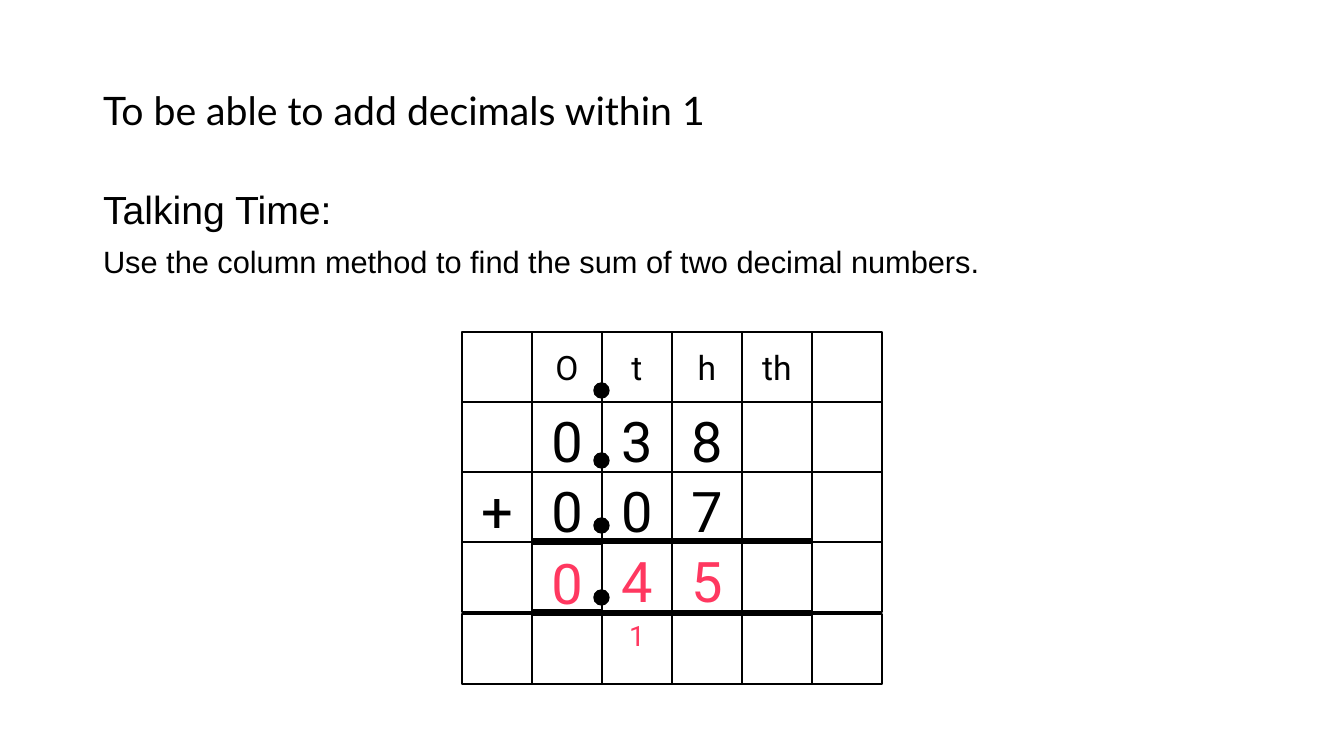
from lxml.etree import SubElement
from pptx import Presentation
from pptx.dml.color import RGBColor
from pptx.enum.shapes import MSO_CONNECTOR, MSO_SHAPE
from pptx.enum.text import MSO_ANCHOR, MSO_AUTO_SIZE, PP_ALIGN
from pptx.oxml.ns import qn
from pptx.util import Pt

PX = 914400 / 100.8
BLACK, WHITE, RED = "000000", "FFFFFF", "FF3860"
CELL = 70
DOT = 15
ROW_TOPS = [0, 70, 140, 210, 282]
# Each row: its six cell texts, text size, colour, anchor
ROWS = [
    (["", "O", "t", "h", "th", ""], 24, BLACK, MSO_ANCHOR.MIDDLE),
    (["", "0", "3", "8", "", ""], 40, BLACK, MSO_ANCHOR.TOP),
    (["+", "0", "0", "7", "", ""], 40, BLACK, MSO_ANCHOR.TOP),
    (["", "", "4", "5", "", ""], 40, RED, MSO_ANCHOR.TOP),
    (["", "", "1", "", "", ""], 20, RED, MSO_ANCHOR.TOP),
]
BAR_TOPS = [209, 281]
DOT_TOPS = [51, 121, 186, 258]


def px(length):
    return round(length * PX)


def color(value):
    return RGBColor.from_string(value)


def write(paragraph, text, size=24, font="Arial", fill=BLACK,
          align=PP_ALIGN.LEFT, spacing=1.0, before=0):
    paragraph.alignment = align
    paragraph.line_spacing = spacing
    paragraph.space_before = Pt(before)
    run = paragraph.add_run()
    run.text = text
    run.font.size = Pt(size)
    run.font.name = font
    run.font.color.rgb = color(fill)


def place(placeholder, left, top, width, height, anchor):
    placeholder.left, placeholder.top = px(left), px(top)
    placeholder.width, placeholder.height = px(width), px(height)
    frame = placeholder.text_frame
    frame.word_wrap = True
    frame.auto_size = MSO_AUTO_SIZE.NONE
    frame.vertical_anchor = anchor
    return frame


def add_shape(slide, kind, left, top, width, height, fill):
    shape = slide.shapes.add_shape(kind, px(left), px(top), px(width), px(height))
    shape.shadow.inherit = False
    shape.fill.solid()
    shape.fill.fore_color.rgb = color(fill)
    shape.line.color.rgb = color(BLACK)
    shape.line.width = Pt(1)
    return shape


def add_cell(slide, left, top, height, text, size, fill, anchor):
    shape = add_shape(slide, MSO_SHAPE.RECTANGLE, left, top, CELL, height, WHITE)
    if text:
        shape.text_frame.vertical_anchor = anchor
        write(shape.text_frame.paragraphs[0], text, size=size, font="Roboto",
              fill=fill, align=PP_ALIGN.CENTER)


def add_bar(slide, left, top, width):
    bar = slide.shapes.add_connector(
        MSO_CONNECTOR.STRAIGHT, px(left), px(top), px(left + width), px(top))
    bar.line.color.rgb = color(BLACK)
    bar.line.width = Pt(4.5)
    SubElement(bar._element.spPr, qn("a:effectLst"))


def add_heading(slide, left, top, width, height):
    frame = place(slide.shapes.title, left, top, width, height, MSO_ANCHOR.MIDDLE)
    write(frame.paragraphs[0], "To be able to add decimals within 1",
          size=28, font="Lato", spacing=0.9)


def add_task(slide, left, top, width, height):
    frame = place(slide.placeholders[1], left, top, width, height, MSO_ANCHOR.TOP)
    task = "Use the column method to find the sum of two decimal numbers."
    for paragraph, text, size, before in [
            (frame.paragraphs[0], "Talking Time:", 28, 0),
            (frame.add_paragraph(), task, 22, 10)]:
        properties = paragraph._p.get_or_add_pPr()
        properties.set("marL", "0")
        properties.set("indent", "0")
        SubElement(properties, qn("a:buNone"))
        write(paragraph, text, size=size, spacing=0.9, before=before)


def add_column_sum(slide, left, top):
    # Squared grid
    for row_top, (texts, size, fill, anchor) in zip(ROW_TOPS, ROWS):
        for column, text in enumerate(texts):
            add_cell(slide, left + column * CELL, top + row_top, CELL,
                     text, size, fill, anchor)
    # Answer bars
    for bar_top in BAR_TOPS:
        add_bar(slide, left + CELL, top + bar_top, 4 * CELL)
    # Ones digit of the answer, fitted between the bars
    add_cell(slide, left + CELL, top + 212, 66, "0", 40, RED, MSO_ANCHOR.TOP)
    # Decimal points
    for dot_top in DOT_TOPS:
        add_shape(slide, MSO_SHAPE.OVAL, left + 2 * CELL - 8, top + dot_top,
                  DOT, DOT, BLACK)


def main():
    presentation = Presentation()
    presentation.slide_width, presentation.slide_height = px(1344), px(756)
    slide = presentation.slides.add_slide(presentation.slide_layouts[1])
    add_heading(slide, 93, 40, 968, 146)
    add_task(slide, 93, 186, 1159, 480)
    add_column_sum(slide, 462, 332)
    presentation.save("out.pptx")


if __name__ == "__main__":
    main()
